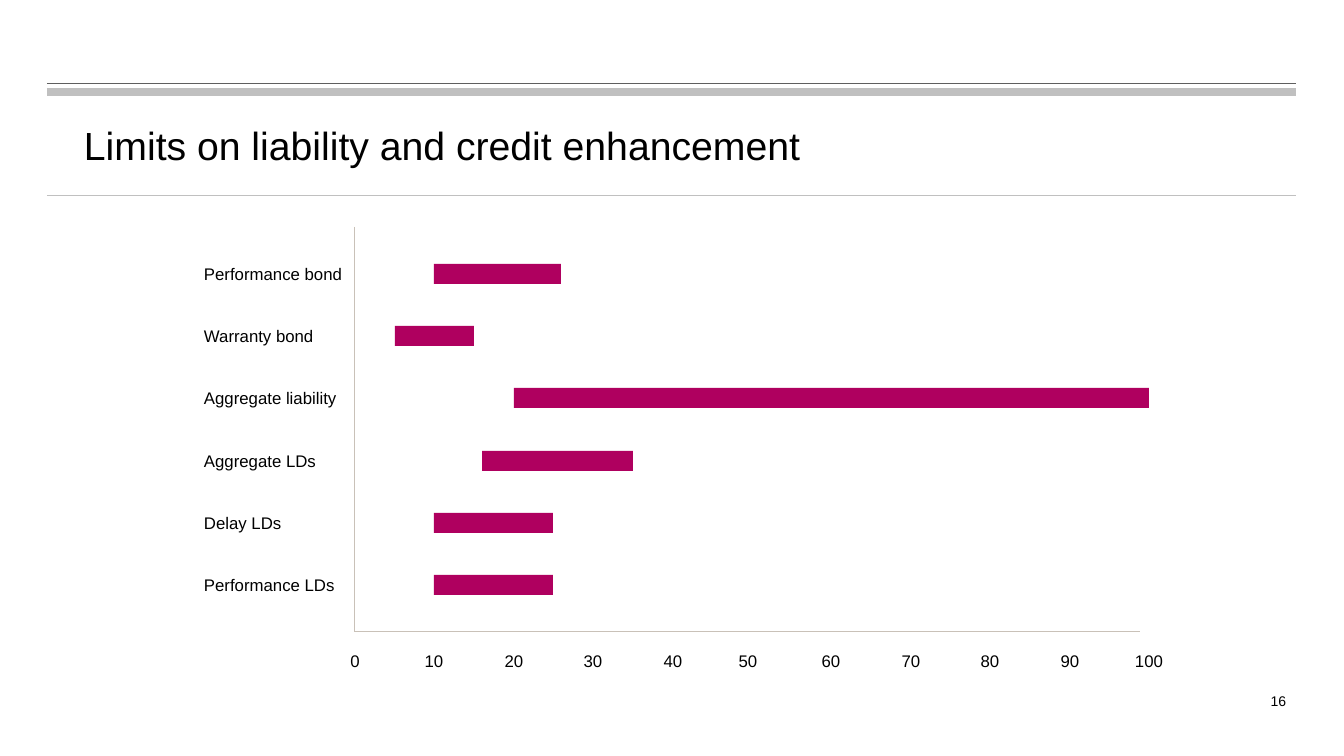
from lxml import etree
from pptx import Presentation
from pptx.dml.color import RGBColor
from pptx.enum import shapes, text
from pptx.oxml.ns import qn
from pptx.util import Emu, Pt

# Content
TITLE = "Limits on liability and credit enhancement"
PAGE = "16"
RANGES = [  # label, low, high
    ("Performance bond", 10, 26),
    ("Warranty bond", 5, 15),
    ("Aggregate liability", 20, 100),
    ("Aggregate LDs", 16, 35),
    ("Delay LDs", 10, 25),
    ("Performance LDs", 10, 25),
]
TICKS = range(0, 101, 10)
TICK_SHIFT = {50: -4}  # this label sits slightly left of its tick
RULES = [(83, "5F5F5F", 0.5), (92, "C0C0C0", 6), (195, "C0C0C0", 0.5)]
BLACK, BAR, AXIS = "000000", "AF005F", "C9C1B8"
LEFT, CENTER, RIGHT = (text.PP_ALIGN.LEFT, text.PP_ALIGN.CENTER,
                       text.PP_ALIGN.RIGHT)

# Layout in px
SLIDE_W, SLIDE_H = 1344, 756
AXIS_X, AXIS_TOP, AXIS_Y, AXIS_END = 355, 227, 632, 1140
SCALE_W = 794  # length of 0 to 100
FIRST_BAR, BAR_SPAN, BAR_H = 264, 311, 20


def px(n):
    return Emu(round(n * 914400 / 100.8))


def color(hex_string):
    return RGBColor.from_string(hex_string)


def value_x(value):
    return AXIS_X + round(value * SCALE_W / 100)


def add_text(content, box, size, insets, align=LEFT,
             anchor=text.MSO_ANCHOR.TOP):
    tf = slide.shapes.add_textbox(*map(px, box)).text_frame
    tf.word_wrap = True
    tf.vertical_anchor = anchor
    (tf.margin_left, tf.margin_top,
     tf.margin_right, tf.margin_bottom) = map(px, insets)
    tf.text = content
    p = tf.paragraphs[0]
    p.alignment = align
    font = p.runs[0].font
    font.name, font.size = "Arial", Pt(size)
    font.color.rgb = color(BLACK)


def add_line(x1, y1, x2, y2, hex_string, width):
    line = slide.shapes.add_connector(
        shapes.MSO_CONNECTOR.STRAIGHT, *map(px, (x1, y1, x2, y2)))
    line.line.color.rgb = color(hex_string)
    line.line.width = Pt(width)
    etree.SubElement(line._element.spPr, qn("a:effectLst"))


prs = Presentation()
prs.slide_width, prs.slide_height = px(SLIDE_W), px(SLIDE_H)
slide = prs.slides.add_slide(prs.slide_layouts[6])

# Header rules, title and page number
for y, hex_string, width in RULES:
    add_line(47, y, 1296, y, hex_string, width)
add_text(TITLE, (45, 97, 1248, 95), 28, (39, 5, 10, 5),
         anchor=text.MSO_ANCHOR.MIDDLE)
add_text(PAGE, (940, 688, 356, 52), 10, (10, 5, 10, 5), RIGHT)

# Axes and tick labels
add_line(AXIS_X, AXIS_TOP, AXIS_X, AXIS_Y, AXIS, 0.75)
add_line(AXIS_END, AXIS_Y, AXIS_X, AXIS_Y, AXIS, 0.75)
for tick in TICKS:
    x = value_x(tick) + TICK_SHIFT.get(tick, 0)
    add_text(str(tick), (x - 16, 646, 32, 30), 12, (0, 5, 0, 5), CENTER)

# Row labels and range bars
for i, (label, low, high) in enumerate(RANGES):
    top = FIRST_BAR + round(i * BAR_SPAN / (len(RANGES) - 1))
    add_text(label, (204, top - 5, 151, 30), 12, (0, 5, 10, 5))
    x = value_x(low)
    sp = slide.shapes.add_shape(
        shapes.MSO_SHAPE.RECTANGLE,
        *map(px, (x, top, value_x(high) - x, BAR_H)))
    sp.shadow.inherit = False
    sp.fill.solid()
    sp.fill.fore_color.rgb = color(BAR)
    sp.line.fill.background()

prs.save("out.pptx")
